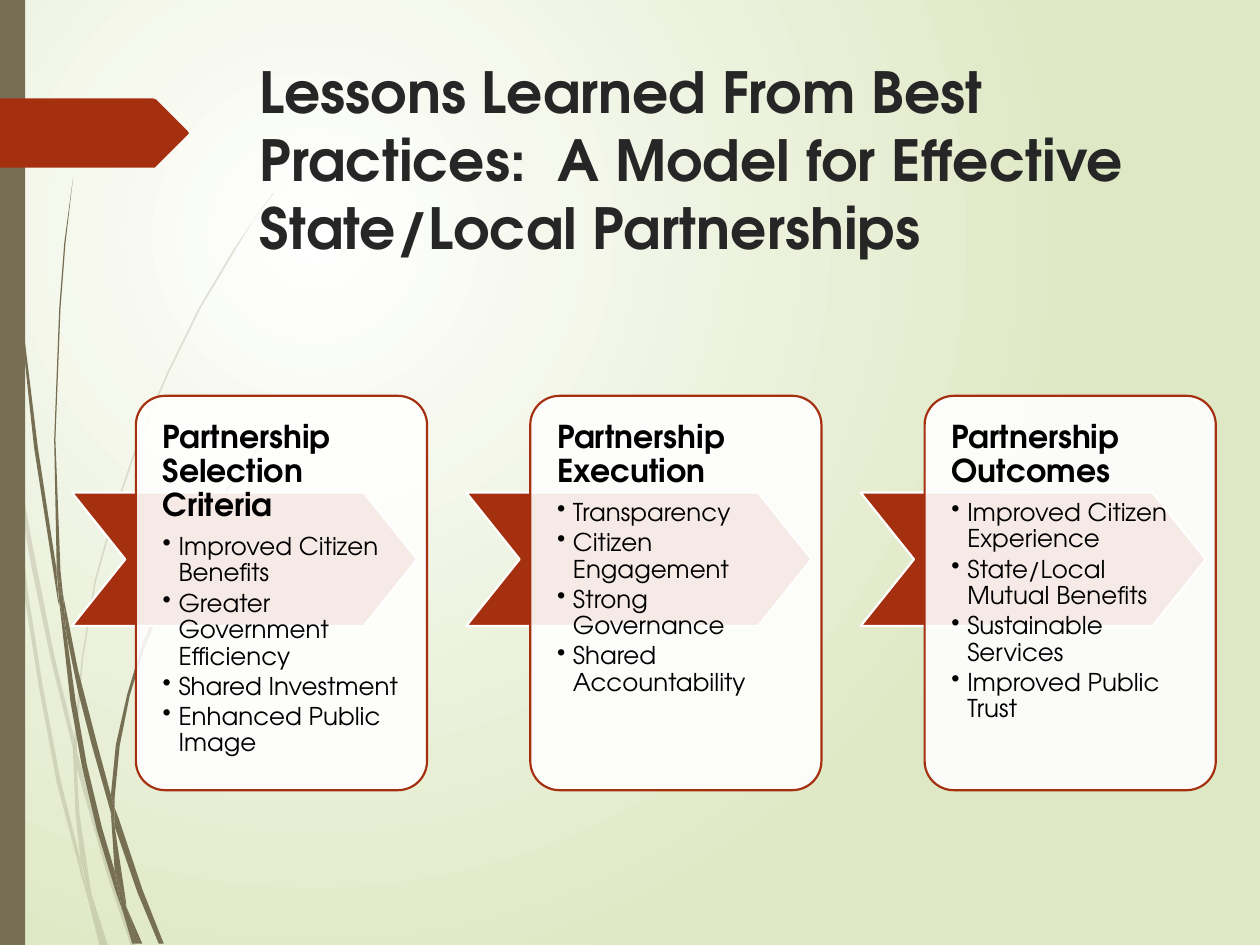
from dataclasses import dataclass

from lxml import etree
from pptx import Presentation
from pptx.dml.color import RGBColor
from pptx.enum.shapes import MSO_SHAPE
from pptx.enum.text import MSO_ANCHOR, MSO_AUTO_SIZE, PP_ALIGN
from pptx.oxml.ns import qn
from pptx.util import Cm, Pt

RECTANGLE = MSO_SHAPE.RECTANGLE
ROUNDED = MSO_SHAPE.ROUNDED_RECTANGLE
CHEVRON = MSO_SHAPE.CHEVRON
TOP = MSO_ANCHOR.TOP
LEFT = PP_ALIGN.LEFT
NO_AUTOFIT = MSO_AUTO_SIZE.NONE

# Outlines are in hundredths of an inch
OUTLINE_UNIT = Cm(0.0254)

PALE_REEDS = [
    [(8, 350), (6, 322), (0, 282), (0, 299), (7, 344)],
    [(40, 522), (59, 599), (59, 586), (43, 520), (26, 434), (10, 345), (12, 376), (25, 450)],
    [(64, 607), (61, 596), (61, 610), (85, 694), (104, 751), (108, 751), (88, 692)],
    [(83, 751), (86, 751), (73, 711)],
    [(64, 683), (48, 619), (34, 545), (22, 469), (12, 376), (8, 350), (12, 410), (19, 470),
     (31, 546), (45, 621), (64, 693), (70, 714), (69, 707)],
    [(58, 599), (60, 646), (64, 683), (67, 692), (73, 711), (72, 706), (63, 646), (61, 610),
     (61, 608)],
    [(61, 584), (66, 522), (76, 462), (92, 405), (111, 349), (134, 296), (159, 245), (187, 198),
     (201, 175), (217, 154), (217, 153), (201, 175), (186, 197), (158, 244), (133, 295),
     (110, 348), (91, 404), (75, 461), (65, 521), (59, 584), (59, 586), (61, 596)],
    [(70, 714), (79, 751), (82, 751)],
    [(61, 608), (61, 610), (61, 596), (59, 586), (58, 599)],
    [(67, 692), (65, 683), (69, 707), (70, 714), (82, 751), (83, 751), (73, 711)],
]
DARK_REEDS = [
    [(5, 110), (14, 233), (27, 355), (46, 477), (47, 481), (45, 457), (45, 453), (30, 355),
     (15, 232), (6, 109), (4, 48), (3, 0), (2, 0), (3, 48)],
    [(73, 592), (88, 645), (88, 633), (88, 631), (77, 590), (62, 532), (50, 472), (53, 505),
     (62, 549)],
    [(94, 649), (91, 641), (91, 656), (109, 708), (126, 749), (130, 749), (113, 706)],
    [(91, 691), (81, 657), (69, 607), (60, 556), (53, 505), (47, 477), (56, 557), (65, 608),
     (77, 659), (92, 708), (97, 722), (96, 717)],
    [(50, 472), (48, 453), (44, 349), (48, 245), (52, 193), (58, 141), (51, 193), (47, 245),
     (43, 349), (45, 449), (49, 472)],
    [(110, 749), (113, 749), (100, 719)],
    [(47, 477), (53, 505), (50, 472), (49, 472), (45, 449), (45, 453)],
    [(91, 633), (95, 592), (103, 552), (115, 513), (131, 476), (149, 440), (169, 406),
     (191, 374), (203, 359), (216, 344), (215, 344), (203, 358), (191, 373), (168, 405),
     (147, 439), (129, 474), (113, 511), (101, 551), (92, 591), (88, 631), (91, 641)],
    [(97, 722), (105, 749), (108, 749)],
    [(88, 645), (91, 691), (96, 706), (100, 719), (100, 716), (91, 656), (90, 651)],
    [(88, 645), (90, 651), (91, 656), (91, 641), (88, 631), (88, 633)],
    [(96, 706), (91, 691), (96, 717), (97, 722), (108, 749), (110, 749), (100, 719)],
]
FLAG = [(149, 107), (124, 132), (123, 133), (0, 133), (0, 78), (121, 78), (124, 79),
        (149, 104), (150, 105.5)]

STAGES = [
    ("Partnership Selection Criteria",
     ["Improved Citizen Benefits", "Greater Government Efficiency", "Shared Investment",
      "Enhanced Public Image"]),
    ("Partnership Execution",
     ["Transparency", "Citizen Engagement", "Strong Governance", "Shared Accountability"]),
    ("Partnership Outcomes",
     ["Improved Citizen Experience", "State/Local Mutual Benefits", "Sustainable Services",
      "Improved Public Trust"]),
]
STAGE_PITCH = 7.95


@dataclass(frozen=True)
class Theme:
    font: str = "TeX Gyre Adventor"
    title_size: float = 32.4
    heading_size: float = 18
    item_size: float = 14
    line_width: float = 1.25
    white: str = "FFFFFF"
    green: str = "DFE8C4"
    olive: str = "766F54"
    rust: str = "A53010"
    ink: str = "262626"
    black: str = "000000"


class SlideBuilder:
    def __init__(self, page, theme):
        self.page = page
        self.theme = theme

    def background(self):
        fill = self.page.background.fill
        fill.gradient()
        for stop, color in zip(fill.gradient_stops, (self.theme.white, self.theme.green)):
            stop.color.rgb = RGBColor.from_string(color)
        # Turn the linear gradient into a radial one
        linear = next(self.page.background._cSld.iter(qn("a:lin")))
        radial = etree.Element(qn("a:path"), {"path": "circle"})
        etree.SubElement(radial, qn("a:fillToRect"),
                         {"l": "50000", "t": "50000", "r": "100000", "b": "100000"})
        linear.getparent().replace(linear, radial)

    def paint(self, shape, color, line=None, opacity=100):
        shape.shadow.inherit = False
        shape.fill.solid()
        shape.fill.fore_color.rgb = RGBColor.from_string(color)
        if opacity < 100:
            tint = shape.fill._xPr.find(qn("a:solidFill"))[0]
            etree.SubElement(tint, qn("a:alpha"), {"val": str(opacity * 1000)})
        if line:
            shape.line.color.rgb = RGBColor.from_string(line)
            shape.line.width = Pt(self.theme.line_width)
        else:
            shape.line.fill.background()

    def outline(self, points, color, opacity=100):
        builder = self.page.shapes.build_freeform(*points[0], scale=OUTLINE_UNIT)
        builder.add_line_segments(points[1:], close=True)
        self.paint(builder.convert_to_shape(), color, opacity=opacity)

    def shape(self, kind, frame, color, line=None, opacity=100, adjustment=None):
        shape = self.page.shapes.add_shape(kind, *map(Cm, frame))
        if adjustment is not None:
            shape.adjustments[0] = adjustment
        self.paint(shape, color, line, opacity)

    def span(self, para, text, size, color, bold=False):
        span = para.add_run()
        span.text = text
        span.font.name = self.theme.font
        span.font.size = Pt(size)
        span.font.bold = bold
        span.font.color.rgb = RGBColor.from_string(color)

    def title(self, text, frame):
        box = self.page.shapes.title
        box.left, box.top, box.width, box.height = map(Cm, frame)
        box.text_frame.auto_size = NO_AUTOFIT
        box.text_frame.vertical_anchor = TOP
        para = box.text_frame.paragraphs[0]
        para.alignment = LEFT
        self.span(para, text, self.theme.title_size, self.theme.ink, bold=True)

    def stage_text(self, heading, items, frame):
        text = self.page.shapes.add_textbox(*map(Cm, frame)).text_frame
        text.word_wrap = True
        text.margin_left = text.margin_right = text.margin_top = text.margin_bottom = Cm(0.36)
        para = text.paragraphs[0]
        para.line_spacing = 0.9
        para.space_after = Pt(6.3)
        self.span(para, heading, self.theme.heading_size, self.theme.black, bold=True)
        for item in items:
            para = text.add_paragraph()
            para.level = 1
            para.line_spacing = 0.9
            para.space_after = Pt(2.1)
            self.bullet(para)
            self.span(para, item, self.theme.item_size, self.theme.black)

    def bullet(self, para):
        properties = para._p.get_or_add_pPr()
        properties.set("marL", str(Cm(0.32)))
        properties.set("indent", str(-Cm(0.32)))
        etree.SubElement(properties, qn("a:buChar"), {"char": "•"})


def main():
    deck = Presentation()
    deck.slide_width, deck.slide_height = Cm(25.4), Cm(19.05)
    theme = Theme()
    slide = SlideBuilder(deck.slides.add_slide(deck.slide_layouts[5]), theme)

    # Backdrop: gradient, reeds, side bar and flag
    slide.background()
    for reed in PALE_REEDS:
        slide.outline(reed, theme.olive, opacity=20)
    for reed in DARK_REEDS:
        slide.outline(reed, theme.olive)
    slide.shape(RECTANGLE, (0, 0, 0.51, 19.05), theme.olive)
    slide.outline(FLAG, theme.rust)

    slide.title("Lessons Learned From Best Practices:  A Model for Effective "
                "State/Local Partnerships", (4.98, 1.02, 19.96, 3.68))

    # Three stages: chevron, translucent card and its text
    for index, (heading, items) in enumerate(STAGES):
        shift = index * STAGE_PITCH
        slide.shape(CHEVRON, (1.45 + shift, 9.93, 6.96, 2.69), theme.rust, theme.white,
                    adjustment=0.4)
        slide.shape(ROUNDED, (2.74 + shift, 7.98, 5.87, 7.95), theme.white, theme.rust,
                    opacity=90, adjustment=0.1)
        slide.stage_text(heading, items, (2.92 + shift, 8.13, 5.54, 7.59))

    deck.save("out.pptx")


if __name__ == "__main__":
    main()
